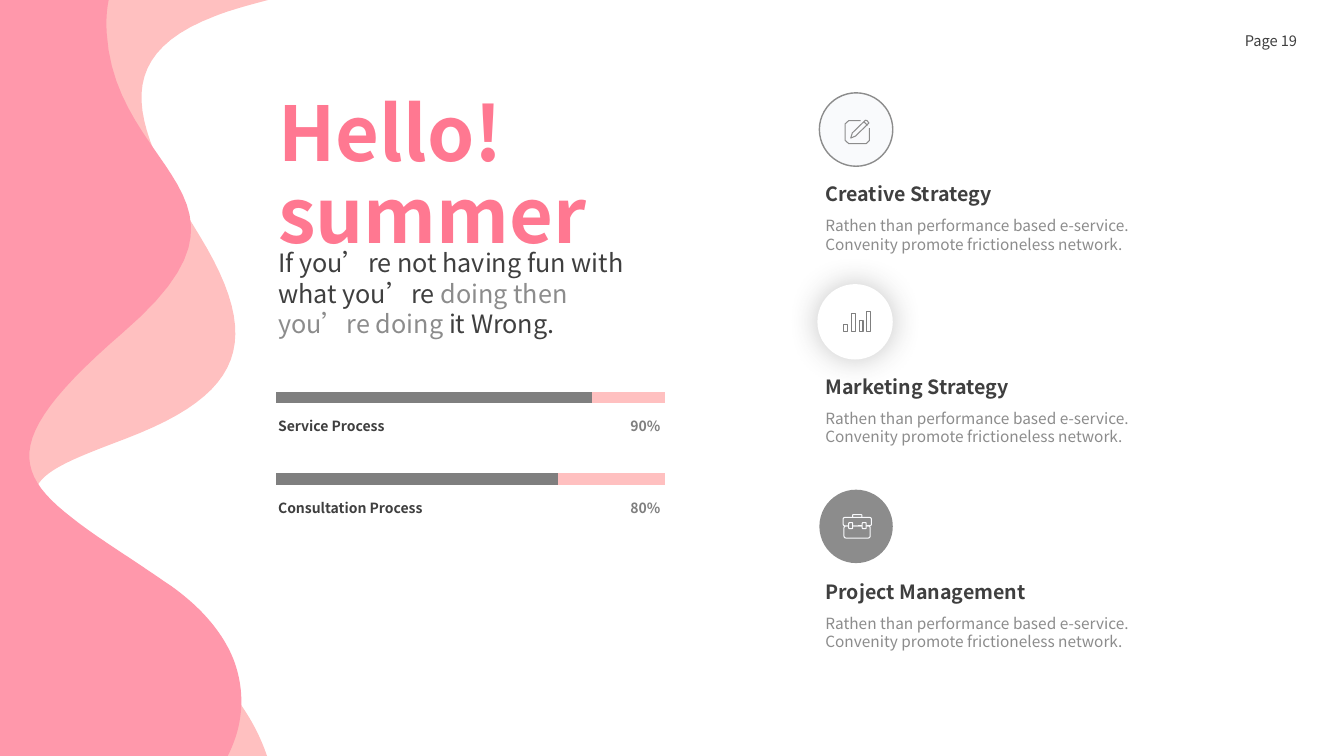
from dataclasses import dataclass

from lxml import etree
from pptx import Presentation
from pptx.dml.color import RGBColor
from pptx.enum.shapes import MSO_CONNECTOR, MSO_SHAPE
from pptx.enum.text import MSO_ANCHOR, PP_ALIGN
from pptx.oxml.ns import qn
from pptx.util import Cm, Pt

OVAL, RECT, ROUNDED = MSO_SHAPE.OVAL, MSO_SHAPE.RECTANGLE, MSO_SHAPE.ROUNDED_RECTANGLE
STRAIGHT = MSO_CONNECTOR.STRAIGHT
TOP, MIDDLE = MSO_ANCHOR.TOP, MSO_ANCHOR.MIDDLE
LEFT, RIGHT = PP_ALIGN.LEFT, PP_ALIGN.RIGHT


@dataclass(frozen=True)
class Theme:
    font: str = "Noto Sans CJK SC"
    dark: str = "3F3F3F"
    grey: str = "8C8C8C"
    bar: str = "7F7F7F"
    blush: str = "FFC0C0"
    rose: str = "FF98AB"
    title: str = "FF7891"
    pale: str = "F9FAFC"
    white: str = "FFFFFF"
    title_size: float = 54
    lead_size: float = 18
    heading_size: float = 14
    body_size: float = 11
    page_size: float = 10.5
    label_size: float = 10


THEME = Theme()

# Content; all lengths are in centimetres
PAGE_LABEL = "Page 19"
TITLE = "Hello!summer"
LEAD = [
    ("If you’re not having fun with what you’re", THEME.dark),
    (" doing then you’re doing", THEME.grey),
    (" it Wrong.", THEME.dark),
]
PROGRESS = [("Service Process", "90%", 14.91), ("Consultation Process", "80%", 14.05)]
SERVICE_TEXT = "Rathen than performance based e-service. Convenity promote frictioneless network."
# heading, heading top, circle (left, top, size), circle fill, circle outline
SERVICES = [
    ("Creative Strategy", 4.47, (20.65, 2.34, 1.85), THEME.pale, THEME.grey),
    ("Marketing Strategy", 9.32, (20.6, 7.16, 1.9), THEME.white, None),
    ("Project Management", 14.48, (20.65, 12.34, 1.85), THEME.grey, None),
]
# colour, right end of the top edge, Bezier segments down to the bottom edge
WAVES = [
    (THEME.blush, (6.76, 0), [
        (6.27, 0.13, 5.82, 0.25, 5.41, 0.41), (2.64, 1.47, 3.4, 3.28, 5.03, 5.94),
        (6.65, 8.59, 6.12, 9.93, 3.18, 11.05), (1.4, 11.73, 0.43, 12.07, 1.07, 13.06),
        (1.47, 13.69, 2.54, 14.63, 4.45, 16.08), (4.7, 16.31, 4.95, 16.51, 5.16, 16.71),
        (6.02, 17.53, 6.48, 18.31, 6.73, 19.05)]),
    (THEME.rose, (2.74, 0), [
        (2.69, 0.23, 2.67, 0.51, 2.69, 0.84), (2.9, 4.37, 7.09, 4.95, 3.1, 8.38),
        (0.18, 10.9, 0.23, 11.84, 1.83, 13.06), (2.39, 13.51, 3.2, 14, 4.11, 14.63),
        (5, 15.21, 5.64, 15.93, 5.92, 16.71), (6.17, 17.45, 6.15, 18.24, 5.74, 19.05)]),
]
NOTE_FRAME = [(21.69, 3.04), (21.39, 3.04), (21.3, 3.12), (21.3, 3.54),
              (21.39, 3.62), (21.83, 3.62), (21.91, 3.54), (21.91, 3.23)]
PENCIL = [(21.44, 3.48), (21.48, 3.35), (21.81, 3.03), (21.85, 3.04), (21.9, 3.1), (21.56, 3.43)]
PENCIL_BAND = [(21.77, 3.07), (21.86, 3.16)]
CHART_BARS = [0.18, 0.46, 0.28, 0.51]
CASE_PARTS = [(21.27, 13.25, 0.66, 0.31), (21.25, 13.04, 0.71, 0.21), (21.49, 12.97, 0.23, 0.07),
              (21.39, 13.17, 0.1, 0.15), (21.73, 13.17, 0.1, 0.15)]
PAGE_WIDTH, PAGE_HEIGHT = 33.87, 19.05
TEXT_LEFT, SERVICE_LEFT = 6.76, 20.55
BAR_LEFT, BAR_RIGHT, BAR_TOP, BAR_STEP = 6.96, 16.76, 10.01, 2.06


def paint(shape, fill=None, line=None, width=0.75):
    shape.shadow.inherit = False
    if fill:
        shape.fill.solid()
        shape.fill.fore_color.rgb = RGBColor.from_string(fill)
    else:
        shape.fill.background()
    if line:
        shape.line.color.rgb = RGBColor.from_string(line)
        shape.line.width = Pt(width)
    else:
        shape.line.fill.background()


def add_preset(page, kind, area, fill=None, line=None, width=0.75):
    shape = page.shapes.add_shape(kind, *map(Cm, area))
    paint(shape, fill, line, width)
    return shape


def add_outline(page, points, closed, fill=None, line=None):
    corners = [(Cm(x), Cm(y)) for x, y in points]
    builder = page.shapes.build_freeform(*corners[0])
    builder.add_line_segments(corners[1:], close=closed)
    paint(builder.convert_to_shape(), fill, line)


def curve_points(start, segments, steps=24):
    """Sample a chain of cubic Bezier segments into points."""
    points = [start]
    for ax, ay, bx, by, end_x, end_y in segments:
        chain = (points[-1], (ax, ay), (bx, by), (end_x, end_y))
        for step in range(1, steps + 1):
            t = step / steps
            weights = ((1 - t) ** 3, 3 * t * (1 - t) ** 2, 3 * t * t * (1 - t), t ** 3)
            points.append(tuple(sum(w * p[axis] for w, p in zip(weights, chain)) for axis in (0, 1)))
    return points


def write(box, spans, size, bold=False, align=LEFT, anchor=TOP, spacing=1.0, before=0):
    """Fill a text shape with one paragraph of (text, colour) spans."""
    frame = box.text_frame
    frame.word_wrap = True
    frame.vertical_anchor = anchor
    para = frame.paragraphs[0]
    para.alignment, para.line_spacing, para.space_before = align, spacing, Pt(before)
    for text, color in spans:
        span = para.add_run()
        span.text = text
        span.font.name, span.font.size, span.font.bold = THEME.font, Pt(size), bold
        span.font.color.rgb = RGBColor.from_string(color)
        east_asian = etree.SubElement(span.font._element, qn("a:ea"))
        east_asian.set("typeface", THEME.font)


def add_text(page, area, spans, size, **style):
    write(page.shapes.add_textbox(*map(Cm, area)), spans, size, **style)


def add_glow(shape):
    effects = shape._element.spPr.find(qn("a:effectLst"))
    shadow = etree.SubElement(effects, qn("a:outerShdw"), blurRad=str(Pt(21)), dist="0", dir="0")
    color = etree.SubElement(shadow, qn("a:srgbClr"), val=THEME.dark)
    etree.SubElement(color, qn("a:alpha"), val="30000")


def add_bar(page, right, top, color):
    bar = page.shapes.add_connector(STRAIGHT, Cm(BAR_LEFT), Cm(top), Cm(right), Cm(top))
    bar.line.color.rgb = RGBColor.from_string(color)
    bar.line.width = Pt(8)
    etree.SubElement(bar._element.spPr, qn("a:effectLst"))


def add_progress(page):
    for row, (label, share, filled_to) in enumerate(PROGRESS):
        top = BAR_TOP + row * BAR_STEP
        add_bar(page, BAR_RIGHT, top, THEME.blush)
        add_bar(page, filled_to, top, THEME.bar)
        style = dict(bold=True, spacing=1.5, before=10)
        add_text(page, (TEXT_LEFT, top + 0.18, 7.52, 0.81), [(label, THEME.dark)],
                 THEME.label_size, **style)
        add_text(page, (14.99, top + 0.18, 1.9, 0.81), [(share, THEME.bar)],
                 THEME.label_size, align=RIGHT, **style)


def add_services(page):
    for heading, top, (left, circle_top, size), fill, line in SERVICES:
        circle = add_preset(page, OVAL, (left, circle_top, size, size), fill, line, 1)
        if fill == THEME.white:
            add_glow(circle)
        add_text(page, (SERVICE_LEFT, top, 9.91, 0.86), [(heading, THEME.dark)],
                 THEME.heading_size, bold=True, before=10)
        add_text(page, (SERVICE_LEFT, top + 0.86, 9.91, 1.24), [(SERVICE_TEXT, THEME.grey)],
                 THEME.body_size, before=10)


def add_icons(page):
    add_outline(page, NOTE_FRAME, False, line=THEME.grey)
    add_outline(page, PENCIL, True, line=THEME.grey)
    add_outline(page, PENCIL_BAND, False, line=THEME.grey)
    for column, height in enumerate(CHART_BARS):
        add_preset(page, RECT, (21.27 + column * 0.19, 8.35 - height, 0.1, height), line=THEME.bar)
    for part in CASE_PARTS:
        add_preset(page, ROUNDED, part, THEME.grey, THEME.pale)


def main():
    deck = Presentation()
    deck.slide_width, deck.slide_height = Cm(PAGE_WIDTH), Cm(PAGE_HEIGHT)
    page = deck.slides.add_slide(deck.slide_layouts[5])
    for color, start, segments in WAVES:
        edge = curve_points(start, segments)
        add_outline(page, [(0, 0), *edge, (0, PAGE_HEIGHT)], True, color)
    add_text(page, (25.32, 0.51, 7.62, 1.02), [(PAGE_LABEL, THEME.dark)],
             THEME.page_size, align=RIGHT, anchor=MIDDLE)
    title = page.shapes.title
    title.left, title.top, title.width, title.height = map(Cm, (TEXT_LEFT, 2.82, 12.29, 3.33))
    write(title, [(TITLE, THEME.title)], THEME.title_size, bold=True, anchor=MIDDLE, spacing=0.9)
    add_text(page, (TEXT_LEFT, 6.12, 10.13, 2.77), LEAD, THEME.lead_size, before=10)
    add_progress(page)
    add_services(page)
    add_icons(page)
    deck.save("out.pptx")


if __name__ == "__main__":
    main()
